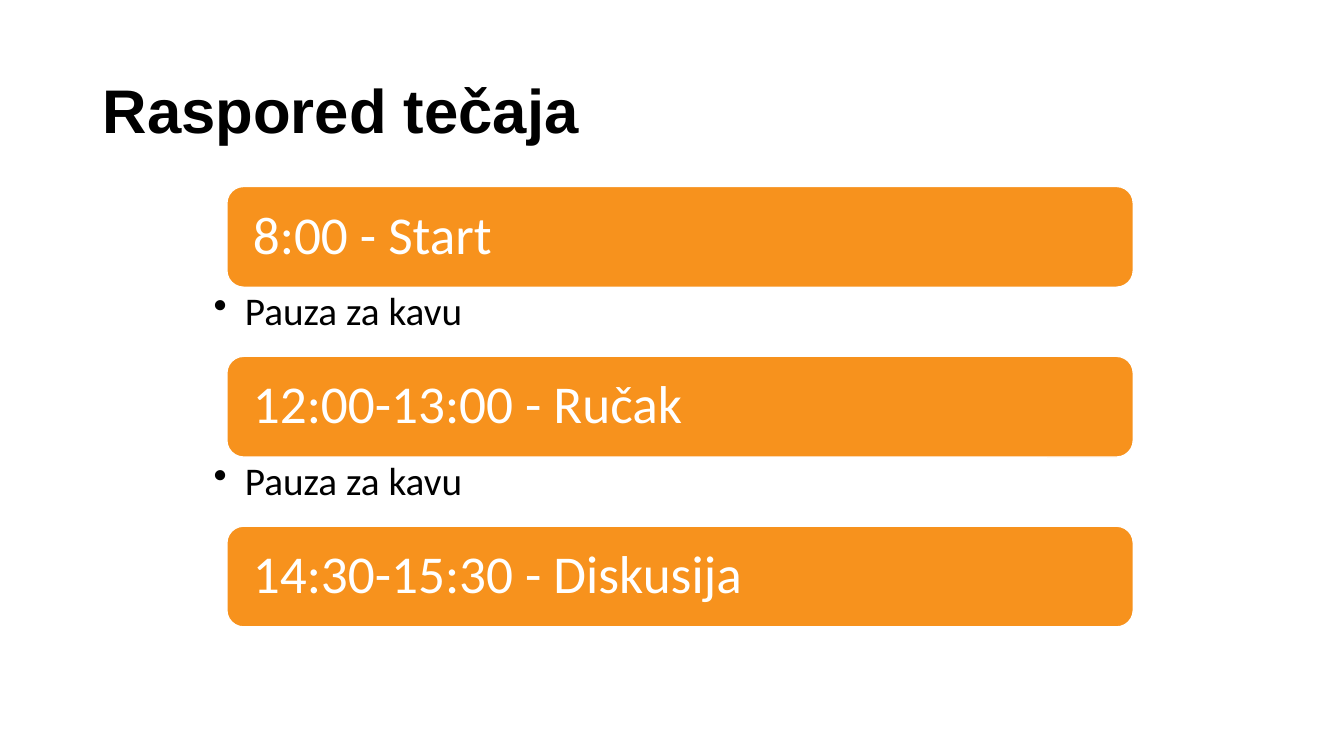
"""Build the course schedule slide."""
from dataclasses import dataclass

import pptx
import pptx.dml.color
import pptx.enum.shapes
import pptx.enum.text
import pptx.util
from lxml import etree

TITLE = "Raspored tečaja"
SCHEDULE = [
    ("8:00 - Start", "Pauza za kavu"),
    ("12:00-13:00 - Ručak", "Pauza za kavu"),
    ("14:30-15:30 - Diskusija", None),
]


@dataclass(frozen=True)
class Theme:
    bar: str = "F7921D"
    light: str = "FFFFFF"
    dark: str = "000000"
    title_font: str = "Arial"
    body_font: str = "Calibri"
    title_size: int = 44
    bar_size: int = 38
    break_size: int = 28


THEME = Theme()
WIDTH, HEIGHT = 13.33, 7.5
TITLE_BOX = (0.92, 0.4, 11.5, 1.45)
BAR_LEFT, BAR_WIDTH, BAR_HEIGHT = 2.25, 8.99, 1
BREAK_LEFT, BREAK_WIDTH, BREAK_HEIGHT = 1.81, 9.88, 0.69
TOP = 1.85
STEP = BAR_HEIGHT + BREAK_HEIGHT - 0.005
BULLET_INDENT = 0.31


def inches(*values):
    return [pptx.util.Inches(v) for v in values]


def rgb(value):
    return pptx.dml.color.RGBColor.from_string(value)


def write(tf, text, font, size, color, anchor, insets, bold=False):
    tf.word_wrap = True
    tf.auto_size = pptx.enum.text.MSO_AUTO_SIZE.NONE
    tf.vertical_anchor = anchor
    tf.margin_left, tf.margin_top, tf.margin_right, tf.margin_bottom = inches(*insets)
    p = tf.paragraphs[0]
    p.alignment = pptx.enum.text.PP_ALIGN.LEFT
    p.line_spacing = 0.9
    r = p.add_run()
    r.text = text
    r.font.name, r.font.size, r.font.bold = font, pptx.util.Pt(size), bold
    r.font.color.rgb = rgb(color)
    return p


def add_bar(s, top, text):
    sp = s.shapes.add_shape(pptx.enum.shapes.MSO_SHAPE.ROUNDED_RECTANGLE,
                            *inches(BAR_LEFT, top, BAR_WIDTH, BAR_HEIGHT))
    sp.shadow.inherit = False
    sp.fill.solid()
    sp.fill.fore_color.rgb = rgb(THEME.bar)
    sp.line.color.rgb = rgb(THEME.light)
    sp.line.width = pptx.util.Pt(1)
    write(sp.text_frame, text, THEME.body_font, THEME.bar_size, THEME.light,
          pptx.enum.text.MSO_ANCHOR.MIDDLE, (0.21,) * 4)


def add_break(s, top, text):
    sp = s.shapes.add_textbox(*inches(BREAK_LEFT, top, BREAK_WIDTH, BREAK_HEIGHT))
    p = write(sp.text_frame, text, THEME.body_font, THEME.break_size, THEME.dark,
              pptx.enum.text.MSO_ANCHOR.TOP, (0.31, 0.04, 0.22, 0.04))
    indent = pptx.util.Inches(BULLET_INDENT)
    p_pr = p._p.get_or_add_pPr()
    p_pr.set("marL", str(indent))
    p_pr.set("indent", str(-indent))
    etree.SubElement(p_pr, pptx.oxml.ns.qn("a:buChar")).set("char", "•")


def main():
    prs = pptx.Presentation()
    prs.slide_width, prs.slide_height = inches(WIDTH, HEIGHT)
    s = prs.slides.add_slide(prs.slide_layouts[5])
    title = s.shapes.title
    title.left, title.top, title.width, title.height = inches(*TITLE_BOX)
    write(title.text_frame, TITLE, THEME.title_font, THEME.title_size, THEME.dark,
          pptx.enum.text.MSO_ANCHOR.MIDDLE, (0.1, 0.05, 0.1, 0.05), bold=True)
    for i, (session, pause) in enumerate(SCHEDULE):
        top = TOP + i * STEP
        add_bar(s, top, session)
        if pause:
            add_break(s, top + BAR_HEIGHT, pause)
    prs.save("out.pptx")


if __name__ == "__main__":
    main()
